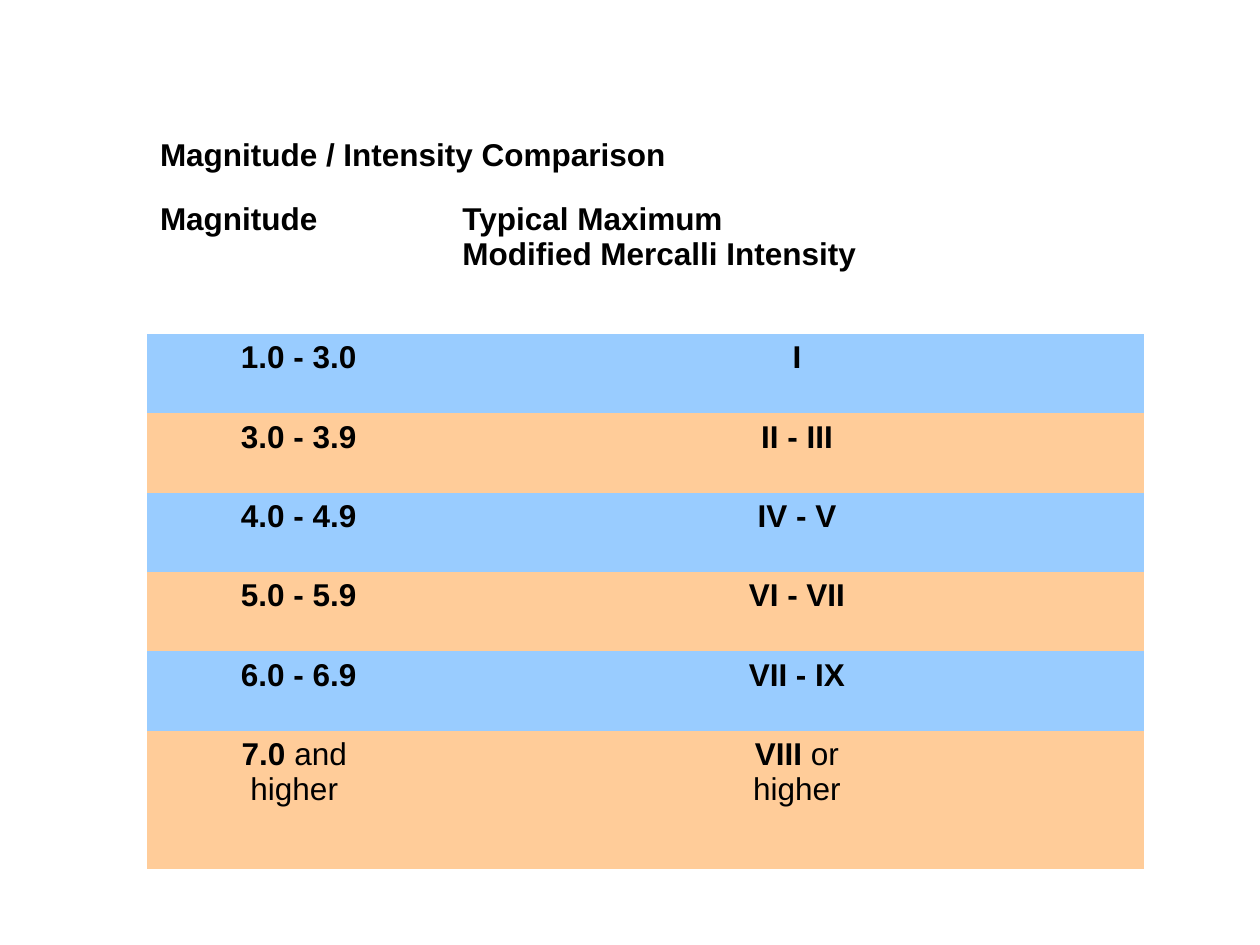
import pptx
import pptx.dml.color
import pptx.enum.text
import pptx.oxml.ns
import pptx.util
from lxml import etree

Inches = pptx.util.Inches
ALIGN = pptx.enum.text.PP_ALIGN
ANCHOR = pptx.enum.text.MSO_ANCHOR

# Content: each cell is bold text, optionally followed by regular text
TITLE = "Magnitude / Intensity Comparison"
HEADINGS = ["Magnitude", "Typical Maximum\nModified Mercalli Intensity"]
LEVELS = [
    [("1.0 - 3.0",), ("I",)],
    [("3.0 - 3.9",), ("II - III",)],
    [("4.0 - 4.9",), ("IV - V",)],
    [("5.0 - 5.9",), ("VI - VII",)],
    [("6.0 - 6.9",), ("VII - IX",)],
    [("7.0", " and \nhigher "), ("VIII", " or\nhigher")],
]
BANDS = ["99CCFF", "FFCC99"]

# Layout
LEFT, TOP = 1.17, 0.92
COLUMN_WIDTHS = [2.4, 5.51]
SHORT_ROW, TALL_ROW = 0.63, 1.1
ROW_HEIGHTS = [SHORT_ROW, TALL_ROW] + [SHORT_ROW] * (len(LEVELS) - 1) + [TALL_ROW]


def color(value):
    return pptx.dml.color.RGBColor.from_string(value)


def add_text(para, text, bold=True, size=18, font="Arial", ink="000000"):
    for number, line in enumerate(text.split("\n")):
        if number:
            para.add_line_break()
        span = para.add_run()
        span.text = line
        span.font.name = font
        span.font.size = pptx.util.Pt(size)
        span.font.bold = bold
        span.font.color.rgb = color(ink)


def format_cell(cell, fill=None):
    """Remove the borders, then set or clear the fill."""
    properties = cell._tc.get_or_add_tcPr()
    for side in ("lnL", "lnR", "lnT", "lnB"):
        line = etree.SubElement(properties, pptx.oxml.ns.qn("a:" + side), w="0")
        etree.SubElement(line, pptx.oxml.ns.qn("a:noFill"))
    if fill:
        cell.fill.solid()
        cell.fill.fore_color.rgb = color(fill)
    else:
        cell.fill.background()


deck = pptx.Presentation()
deck.slide_width, deck.slide_height = Inches(10), Inches(7.5)
page = deck.slides.add_slide(deck.slide_layouts[6])

# Table grid
table = page.shapes.add_table(
    len(ROW_HEIGHTS), len(COLUMN_WIDTHS), Inches(LEFT), Inches(TOP),
    Inches(sum(COLUMN_WIDTHS)), Inches(sum(ROW_HEIGHTS))).table
table.first_row = table.horz_banding = False
for column, width in zip(table.columns, COLUMN_WIDTHS):
    column.width = Inches(width)
for row, height in zip(table.rows, ROW_HEIGHTS):
    row.height = Inches(height)

# Title and column headings
title = table.cell(0, 0)
title.merge(table.cell(0, 1))
title.vertical_anchor = ANCHOR.MIDDLE
add_text(title.text_frame.paragraphs[0], TITLE)
for column, heading in enumerate(HEADINGS):
    format_cell(table.cell(0, column))
    cell = table.cell(1, column)
    format_cell(cell)
    add_text(cell.text_frame.paragraphs[0], heading)

# Banded magnitude levels
for index, level in enumerate(LEVELS):
    for column, parts in enumerate(level):
        cell = table.cell(index + 2, column)
        format_cell(cell, BANDS[index % 2])
        para = cell.text_frame.paragraphs[0]
        para.alignment = ALIGN.CENTER
        for number, text in enumerate(parts):
            add_text(para, text, bold=number == 0)

deck.save("out.pptx")
